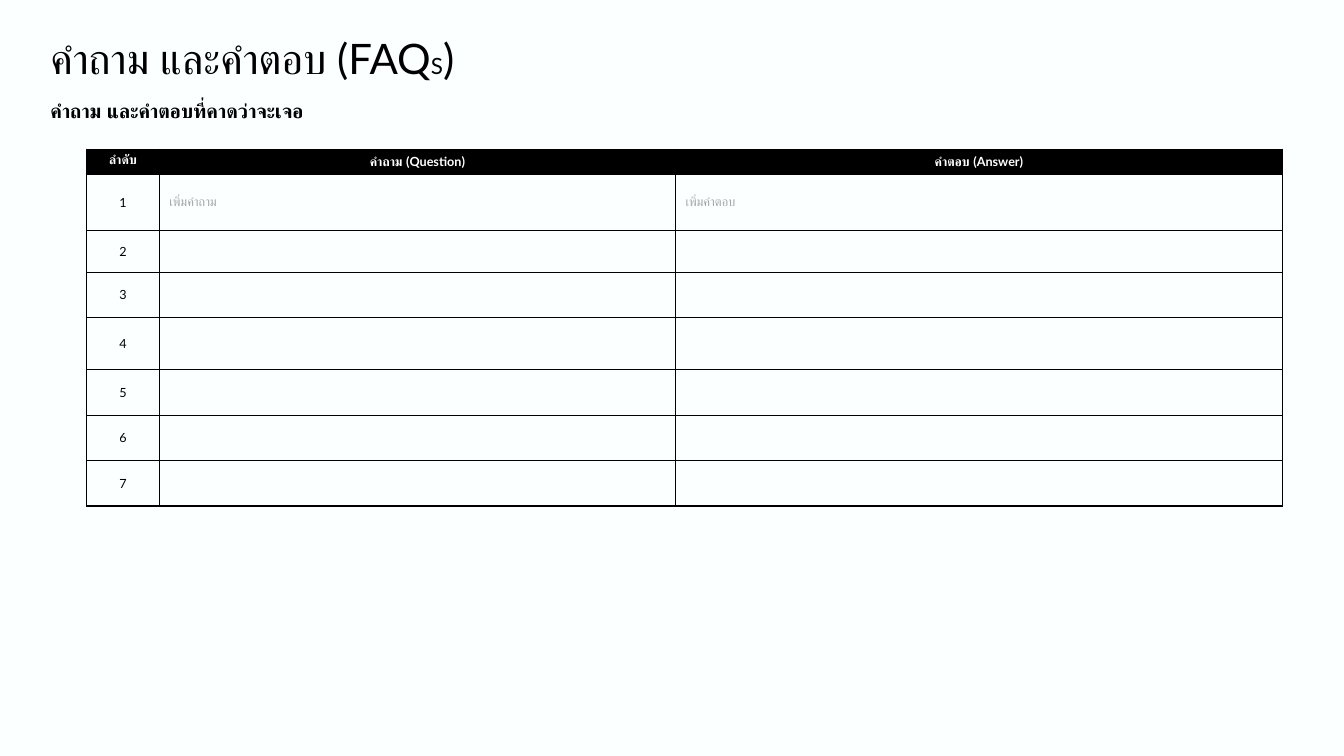
from lxml import etree
from pptx import Presentation
from pptx import util as u
from pptx.dml.color import RGBColor
from pptx.enum import text
from pptx.oxml import ns

FONT = "Lato"
BLACK, WHITE, GRAY, PAPER = "000000", "FFFFFF", "A5A5A5", "FBFFFF"
HEADERS = ["ลำดับ", "คำถาม (Question)", "คำตอบ (Answer)"]
PROMPTS = ["เพิ่มคำถาม", "เพิ่มคำตอบ"]
COLUMN_WIDTHS = [0.72, 5.12, 6.02]
ROW_HEIGHTS = [0.25, 0.56, 0.41, 0.45, 0.52, 0.45, 0.45, 0.45]


def color(value):
    return RGBColor.from_string(value)


def style_font(font, size, value=BLACK, bold=False):
    font.name, font.size, font.bold = FONT, u.Pt(size), bold
    font.color.rgb = color(value)


def place(holder, box, insets, spacing):
    holder.left, holder.top, holder.width, holder.height = map(u.Inches, box)
    frame = holder.text_frame
    frame.margin_left, frame.margin_top, frame.margin_right, frame.margin_bottom = map(u.Inches, insets)
    frame.word_wrap = True
    frame.auto_size = text.MSO_AUTO_SIZE.NONE
    frame.vertical_anchor = text.MSO_ANCHOR.TOP
    paragraph = frame.paragraphs[0]
    paragraph.alignment = text.PP_ALIGN.LEFT
    paragraph.line_spacing = spacing
    paragraph.space_before = u.Pt(0)
    return paragraph


def add_heading(title, box):
    paragraph = place(title, box, (0, 0, 0, 0), 0.8)
    for words, size in [("คำถาม และคำตอบ (FAQ", 30), ("S", 16), (")", 30)]:
        run = paragraph.add_run()
        run.text = words
        style_font(run.font, size)


def add_subheading(body, box):
    paragraph = place(body, box, (0, 0.05, 0.1, 0.05), 1.2)
    paragraph.text = "คำถาม และคำตอบที่คาดว่าจะเจอ"
    properties = paragraph._p.get_or_add_pPr()
    properties.set("marL", "0")
    properties.set("indent", "0")
    etree.SubElement(properties, ns.qn("a:buNone"))
    style_font(paragraph.runs[0].font, 14, bold=True)


def add_borders(cell):
    properties = cell._tc.get_or_add_tcPr()
    for index, side in enumerate(["lnL", "lnR", "lnT", "lnB"]):
        line = etree.Element(ns.qn(f"a:{side}"), w=str(u.Pt(1)))
        fill = etree.SubElement(line, ns.qn("a:solidFill"))
        etree.SubElement(fill, ns.qn("a:srgbClr"), val=BLACK)
        properties.insert(index, line)


def fill_cell(cell, words, row, column):
    header = row == 0
    if header:
        cell.fill.solid()
        cell.fill.fore_color.rgb = color(BLACK)
    else:
        cell.fill.background()
        cell.vertical_anchor = text.MSO_ANCHOR.MIDDLE
    add_borders(cell)
    if not words:
        return
    cell.text_frame.text = words
    paragraph = cell.text_frame.paragraphs[0]
    centered = header or column == 0
    paragraph.alignment = text.PP_ALIGN.CENTER if centered else text.PP_ALIGN.LEFT
    value = WHITE if header else BLACK if column == 0 else GRAY
    style_font(paragraph.runs[0].font, 9, value, header)


def add_questions(slide, left, top):
    answers = [PROMPTS] + [["", ""]] * (len(ROW_HEIGHTS) - 2)
    rows = [HEADERS] + [[str(number), *pair] for number, pair in enumerate(answers, 1)]
    size = sum(COLUMN_WIDTHS), sum(ROW_HEIGHTS)
    table = slide.shapes.add_table(len(rows), len(HEADERS), *map(u.Inches, (left, top, *size))).table
    table.horz_banding = False
    for column, width in zip(table.columns, COLUMN_WIDTHS):
        column.width = u.Inches(width)
    for r, (height, entries) in enumerate(zip(ROW_HEIGHTS, rows)):
        table.rows[r].height = u.Inches(height)
        for c, words in enumerate(entries):
            fill_cell(table.cell(r, c), words, r, c)


def main():
    deck = Presentation()
    deck.slide_width, deck.slide_height = u.Inches(13.33), u.Inches(7.5)
    slide = deck.slides.add_slide(deck.slide_layouts[1])
    slide.background.fill.solid()
    slide.background.fill.fore_color.rgb = color(PAPER)
    add_heading(slide.shapes.title, (0.5, 0.42, 12.44, 0.45))
    add_subheading(slide.placeholders[1], (0.5, 0.88, 12.58, 0.37))
    add_questions(slide, 0.86, 1.48)
    deck.save("out.pptx")


if __name__ == "__main__":
    main()
